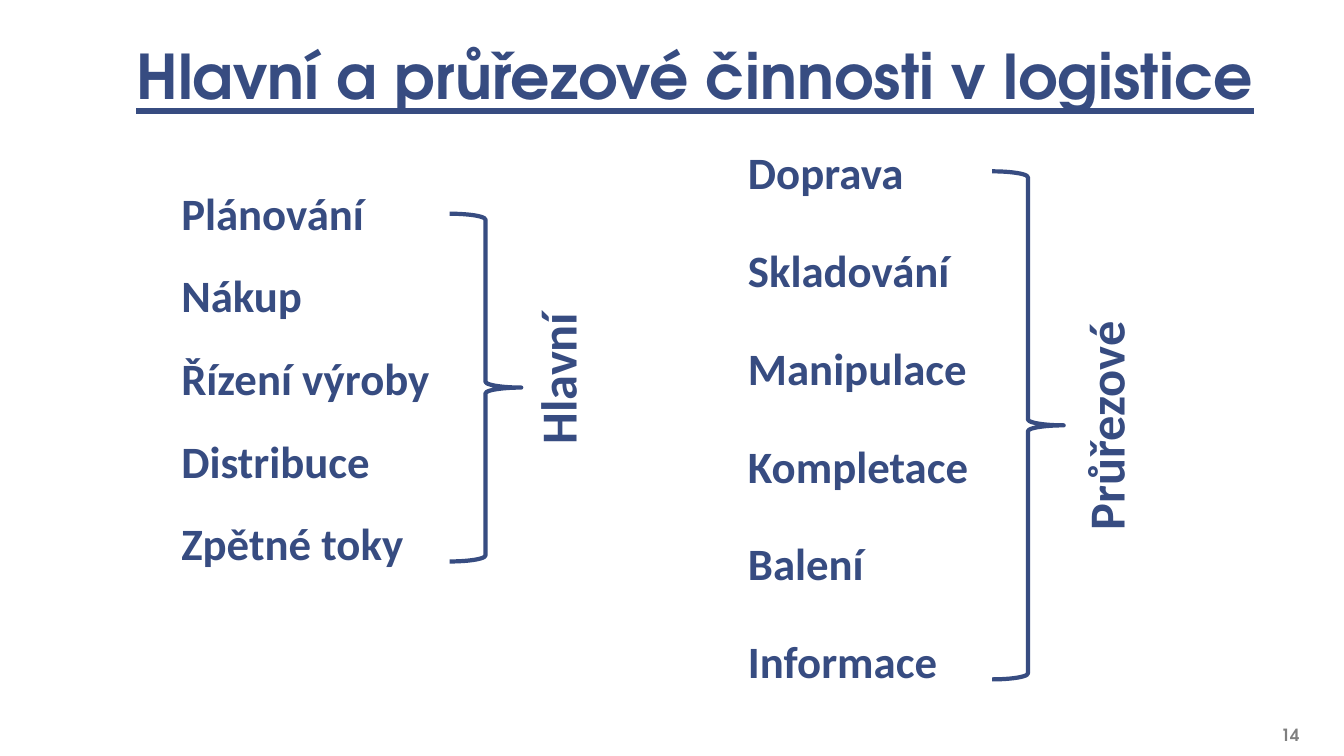
from pptx import Presentation
from pptx import util as u
from pptx.dml.color import RGBColor
from pptx.enum import shapes, text

NAVY = "374C81"
GREY = "7F7F7F"
WHITE = "FFFFFF"
BODY_FONT = "Calibri"
HEAD_FONT = "TeX Gyre Adventor"

MAIN = [("Plánování", 3.23), ("Nákup", 3.23), ("Řízení výroby", 3.23),
        ("Distribuce", 3.23), ("Zpětné toky", 3.23)]
CROSS = [("Doprava", 2.13), ("Skladování", 2.58), ("Manipulace", 2.6),
         ("Kompletace", 2.46), ("Balení", 3.46), ("Informace", 2.68)]


def color(value):
    """Turn a hex string into a colour."""
    return RGBColor.from_string(value)


def place(shape, left, top, width, height):
    """Move and size a shape, in inches."""
    shape.left, shape.top = u.Inches(left), u.Inches(top)
    shape.width, shape.height = u.Inches(width), u.Inches(height)


def write(shape, words, size, align, font=BODY_FONT, shade=NAVY,
          anchor=text.MSO_ANCHOR.TOP, margins=(0.1, 0.05)):
    """Put one bold line of text into a shape and return its run."""
    frame = shape.text_frame
    frame.text = words
    frame.word_wrap = True
    frame.auto_size = text.MSO_AUTO_SIZE.NONE
    frame.vertical_anchor = anchor
    frame.margin_left = frame.margin_right = u.Inches(margins[0])
    frame.margin_top = frame.margin_bottom = u.Inches(margins[1])
    para = frame.paragraphs[0]
    para.alignment = align
    span = para.runs[0]
    span.font.name = font
    span.font.size = u.Pt(size)
    span.font.bold = True
    span.font.color.rgb = color(shade)
    return span


def add_title(page, words):
    """Format the title placeholder as an underlined heading."""
    title = page.shapes.title
    place(title, 1.22, -0.35, 11.43, 1.53)
    span = write(title, words, 44, text.PP_ALIGN.LEFT, HEAD_FONT,
                 anchor=text.MSO_ANCHOR.BOTTOM, margins=(0.13, 0.07))
    span.font.underline = True
    title.text_frame.paragraphs[0].line_spacing = 0.85


def add_text(page, left, top, width, height):
    """Add an empty text box, in inches."""
    return page.shapes.add_textbox(*map(u.Inches, (left, top, width, height)))


def add_preset(page, kind, left, top, width, height):
    """Add a preset shape without a shadow, in inches."""
    shape = page.shapes.add_shape(kind, *map(u.Inches, (left, top, width, height)))
    shape.shadow.inherit = False
    return shape


def add_activities(page, activities, left, top, pitch):
    """Stack activity labels at an even pitch."""
    for row, (name, width) in enumerate(activities):
        box = add_preset(page, shapes.MSO_SHAPE.RECTANGLE,
                         left, top + row * pitch, width, 0.64)
        box.fill.solid()
        box.fill.fore_color.rgb = color(WHITE)
        box.line.fill.background()
        write(box, name, 32, text.PP_ALIGN.LEFT)


def add_brace(page, left, top, height):
    """Draw a right brace beside a group."""
    brace = add_preset(page, shapes.MSO_SHAPE.RIGHT_BRACE, left, top, 0.71, height)
    brace.adjustments[0] = 0.083
    brace.fill.background()
    brace.line.color.rgb = color(NAVY)
    brace.line.width = u.Pt(3)


def add_group_name(page, name, left, top, width):
    """Add a group name that reads upwards."""
    box = add_text(page, left, top, width, 0.71)
    box.rotation = 270
    write(box, name, 36, text.PP_ALIGN.CENTER)


def add_page_number(page, number):
    """Add the page number at the bottom right."""
    box = add_text(page, 11.81, 7.11, 1.21, 0.35)
    write(box, number, 12, text.PP_ALIGN.RIGHT, HEAD_FONT, GREY,
          text.MSO_ANCHOR.BOTTOM, (0.13, 0.07))


def main():
    """Build the slide and save it."""
    deck = Presentation()
    deck.slide_width, deck.slide_height = u.Inches(13.33), u.Inches(7.5)
    page = deck.slides.add_slide(deck.slide_layouts[5])
    add_title(page, "Hlavní a průřezové činnosti v logistice")
    add_activities(page, MAIN, 1.7, 1.79, 0.82)
    add_brace(page, 4.46, 2.12, 3.45)
    add_group_name(page, "Hlavní", 4.42, 3.4, 2.21)
    add_activities(page, CROSS, 7.32, 1.39, 0.97)
    add_brace(page, 9.84, 1.7, 5.04)
    add_group_name(page, "Průřezové", 9.54, 3.87, 2.84)
    add_page_number(page, "14")
    deck.save("out.pptx")


if __name__ == "__main__":
    main()
